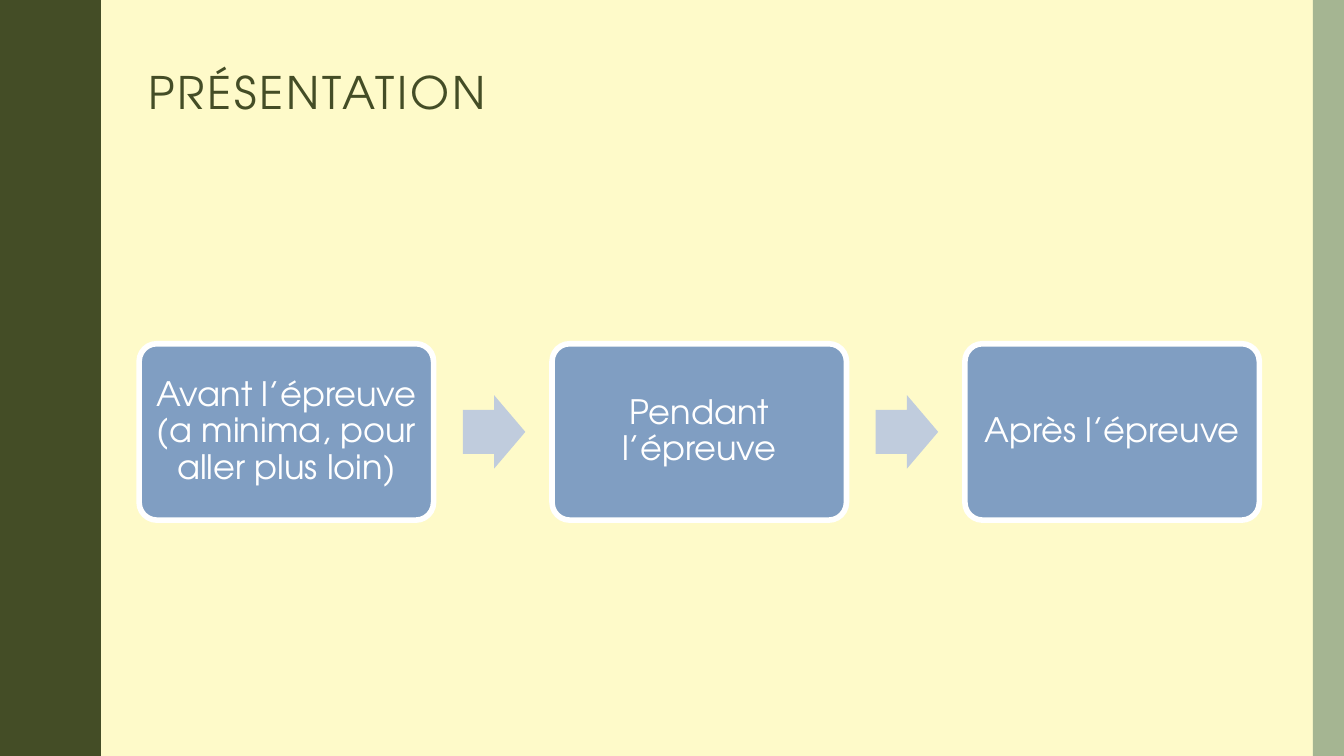
from pptx import Presentation
from pptx import util as u
from pptx.dml.color import RGBColor
from pptx.enum import shapes, text

COLORS = {
    "background": "FEFAC9",
    "dark": "444D26",
    "sage": "A5B592",
    "step": "809EC2",
    "arrow": "C0CCDD",
    "white": "FFFFFF",
}
FONT = "TeX Gyre Adventor"
WIDTH, HEIGHT = 13.33, 7.5


def paint(shape, color):
    shape.shadow.inherit = False
    shape.fill.solid()
    shape.fill.fore_color.rgb = RGBColor.from_string(COLORS[color])
    shape.line.fill.background()


def format_text(paragraph, size, color, alignment):
    paragraph.alignment = alignment
    paragraph.line_spacing = 0.9
    for run in paragraph.runs:
        run.font.name = FONT
        run.font.size = u.Pt(size)
        run.font.color.rgb = RGBColor.from_string(COLORS[color])


presentation = Presentation()
presentation.slide_width = u.Inches(WIDTH)
presentation.slide_height = u.Inches(HEIGHT)
slide = presentation.slides.add_slide(presentation.slide_layouts[5])
slide.background.fill.solid()
slide.background.fill.fore_color.rgb = RGBColor.from_string(COLORS["background"])

# Wavy left edge: each wave goes out along the profile and back mirrored
PERIOD = 1.5
profile = [(0.78, 0), (0.78, 0.07), (0.79, 0.14), (0.8, 0.2), (0.81, 0.25),
           (0.83, 0.29), (0.85, 0.33), (0.87, 0.38), (0.89, 0.42), (0.91, 0.46),
           (0.93, 0.5), (0.95, 0.55), (0.96, 0.61), (0.97, 0.68), (0.97, 0.75)]
wave = profile + [(x, PERIOD - y) for x, y in profile[-2::-1]]
edge = [(x, y + PERIOD * i) for i in range(5) for x, y in wave]
builder = slide.shapes.build_freeform(0, 0, scale=u.Inches(1))
builder.add_line_segments(edge + [(0, HEIGHT)], close=True)
paint(builder.convert_to_shape(), "dark")

# Right band
band = slide.shapes.add_shape(shapes.MSO_SHAPE.RECTANGLE, u.Inches(13.02), 0,
                              u.Inches(0.31), u.Inches(HEIGHT))
paint(band, "sage")

# Title
title = slide.shapes.title
title.left, title.top = u.Inches(1.37), u.Inches(0.42)
title.width, title.height = u.Inches(11.13), u.Inches(1.05)
title.text_frame.text = "PRÉSENTATION"
title.text_frame.vertical_anchor = text.MSO_ANCHOR.MIDDLE
title_paragraph = title.text_frame.paragraphs[0]
format_text(title_paragraph, 32, "dark", text.PP_ALIGN.LEFT)
title_paragraph.runs[0].font._element.set("spc", "200")

# Process steps with an arrow between neighbours
steps = ["Avant l’épreuve (a minima, pour aller plus loin)",
         "Pendant l’épreuve", "Après l’épreuve"]
LEFT, PITCH, ARROW_OFFSET = 1.38, 4.095, 3.21
for i, label in enumerate(steps):
    left = LEFT + i * PITCH
    step = slide.shapes.add_shape(shapes.MSO_SHAPE.ROUNDED_RECTANGLE, u.Inches(left),
                                  u.Inches(3.41), u.Inches(2.92), u.Inches(1.75))
    step.adjustments[0] = 0.1
    paint(step, "step")
    step.line.color.rgb = RGBColor.from_string(COLORS["white"])
    step.line.width = u.Pt(4)
    frame = step.text_frame
    frame.word_wrap = True
    frame.vertical_anchor = text.MSO_ANCHOR.MIDDLE
    frame.margin_left = frame.margin_right = u.Inches(0.1)
    frame.margin_top = frame.margin_bottom = u.Inches(0.1)
    frame.text = label
    format_text(frame.paragraphs[0], 24, "white", text.PP_ALIGN.CENTER)

    if i < len(steps) - 1:
        arrow = slide.shapes.add_shape(shapes.MSO_SHAPE.RIGHT_ARROW,
                                       u.Inches(left + ARROW_OFFSET), u.Inches(3.92),
                                       u.Inches(0.62), u.Inches(0.73))
        arrow.adjustments[0] = 0.6
        arrow.adjustments[1] = 0.5
        paint(arrow, "arrow")

presentation.save("out.pptx")
